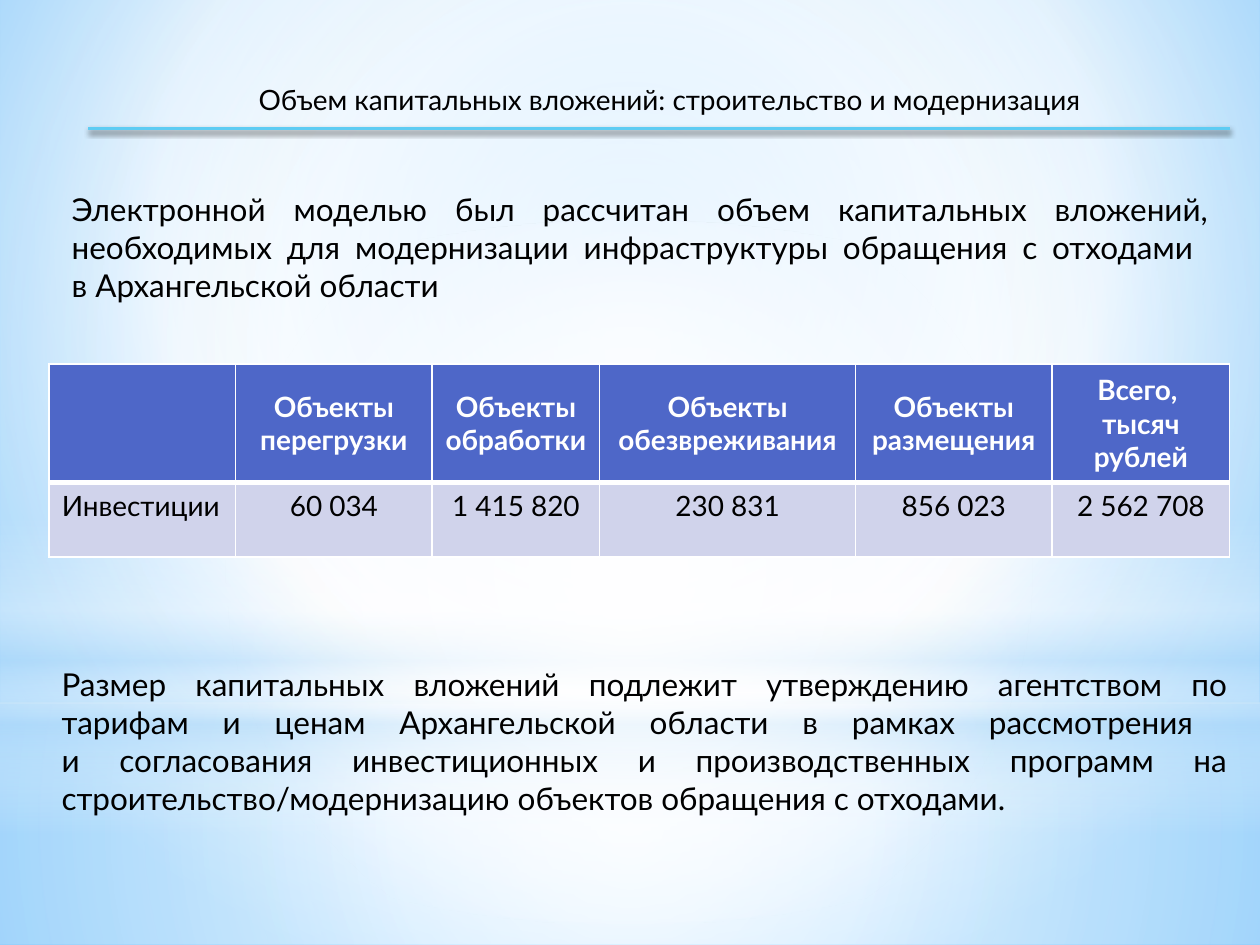
import pptx
import pptx.util
import pptx.dml.color
import pptx.enum.shapes
import pptx.enum.text
import pptx.oxml
import pptx.oxml.ns
import lxml.etree

Inches = pptx.util.Inches
Pt = pptx.util.Pt
RGB = pptx.dml.color.RGBColor
Kind = pptx.enum.shapes.MSO_SHAPE
Align = pptx.enum.text.PP_ALIGN
Anchor = pptx.enum.text.MSO_ANCHOR
qn = pptx.oxml.ns.qn

BLACK = RGB(0, 0, 0)
WHITE = RGB(255, 255, 255)
CYAN = RGB(0x5E, 0xCC, 0xF3)
BLUE = RGB(0x4E, 0x67, 0xC8)
LILAC = RGB(0xD0, 0xD3, 0xEB)
SKY = RGB(0xB4, 0xDC, 0xFA)
PALE = RGB(0x9E, 0xD5, 0xFF)
DEEP = RGB(0x5B, 0xB9, 0xFF)


def shade(root, stops, rect):
    marks = "".join(
        f'<a:gs pos="{pos * 1000}"><a:srgbClr val="{tone}">'
        f'<a:alpha val="{alpha * 1000}"/></a:srgbClr></a:gs>'
        for pos, tone, alpha in stops)
    if rect:
        sides = " ".join(f'{side}="{part * 1000}"' for side, part in zip("ltrb", rect))
        form = f'<a:path path="circle"><a:fillToRect {sides}/></a:path>'
    else:
        form = '<a:lin ang="5400000" scaled="0"/>'
    grad = pptx.oxml.parse_xml(
        f'<a:gradFill {pptx.oxml.ns.nsdecls("a")} rotWithShape="1">'
        f'<a:gsLst>{marks}</a:gsLst>{form}</a:gradFill>')
    old = next(root.iter(qn("a:solidFill")))
    old.getparent().replace(old, grad)


def write(par, text, align, look, tone):
    par.text = text
    par.alignment = align
    for run in par.runs:
        for key, val in look.items():
            setattr(run.font, key, val)
        run.font.color.rgb = tone


deck = pptx.Presentation()
deck.slide_width = Inches(10)
deck.slide_height = Inches(7.5)
slide = deck.slides.add_slide(deck.slide_layouts[5])
shapes = slide.shapes

slide.background.fill.solid()
shade(slide.element, [(0, PALE, 100), (60, WHITE, 100), (100, DEEP, 100)], (20, 10, 20, 60))

MID = (50, 50, 50, 50)
glows = [
    (Kind.RECTANGLE, 5.58, 1.92, MID,
     [(0, WHITE, 91), (37, WHITE, 76), (100, SKY, 79)]),
    (Kind.RECTANGLE, 0, 5.58, MID,
     [(0, WHITE, 89), (48, WHITE, 62), (100, SKY, 79)]),
    (Kind.RECTANGLE, 4.12, 2.5, None,
     [(0, WHITE, 0), (29, WHITE, 30), (45, SKY, 40),
      (55, WHITE, 26), (65, SKY, 60), (100, WHITE, 0)]),
    (Kind.OVAL, 1.75, 5.58, MID, [(0, WHITE, 100), (56, WHITE, 0)]),
]
for kind, top, height, rect, stops in glows:
    glow = shapes.add_shape(kind, 0, Inches(top), Inches(10), Inches(height))
    glow.shadow.inherit = False
    glow.line.fill.background()
    glow.fill.solid()
    shade(glow.element, stops, rect)

small = {"name": "Lato", "size": Pt(16), "bold": False}
strong = {**small, "bold": True}
large = {**small, "size": Pt(18)}

title = shapes.title
title.element.getparent().append(title.element)
place = {"left": 1.14, "top": 0.6, "width": 8.35, "height": 0.37}
for key, val in place.items():
    setattr(title, key, Inches(val))
title.text_frame.auto_size = pptx.enum.text.MSO_AUTO_SIZE.NONE
write(title.text_frame.paragraphs[0],
      "Объем капитальных вложений: строительство и модернизация",
      Align.CENTER, small, BLACK)

rule = shapes.add_connector(pptx.enum.shapes.MSO_CONNECTOR.STRAIGHT,
                            Inches(0.7), Inches(1.02), Inches(9.76), Inches(1.02))
rule.line.color.rgb = CYAN
rule.line.width = Pt(2)
props = rule.element.spPr
glow = lxml.etree.SubElement(props, qn("a:effectLst"))
cast = lxml.etree.SubElement(glow, qn("a:outerShdw"), blurRad=str(Pt(3.1)),
                             dist=str(Pt(1.8)), dir="5400000", rotWithShape="0")
tint = lxml.etree.SubElement(cast, qn("a:srgbClr"), val=str(BLACK))
lxml.etree.SubElement(tint, qn("a:alpha"), val="45000")

notes = [
    (0.47, 1.33, 9.22, 1.14, 0.18,
     "Электронной моделью был рассчитан объем капитальных вложений, "
     "необходимых для модернизации инфраструктуры обращения с отходами \v"
     "в Архангельской области "),
    (0.39, 5.23, 9.45, 1.31, 0.05,
     "Размер капитальных вложений подлежит утверждению агентством по "
     "тарифам и ценам Архангельской области в рамках рассмотрения \v"
     "и согласования инвестиционных и производственных программ на "
     "строительство/модернизацию объектов обращения с отходами."),
]
for left, top, width, height, inset, text in notes:
    box = shapes.add_textbox(Inches(left), Inches(top), Inches(width), Inches(height))
    box.text_frame.word_wrap = True
    box.text_frame.margin_top = Inches(inset)
    write(box.text_frame.paragraphs[0], text, Align.JUSTIFY, large, BLACK)

heads = ["", "Объекты перегрузки", "Объекты обработки", "Объекты обезвреживания",
         "Объекты размещения", "Всего, \vтысяч рублей"]
sums = ["Инвестиции", "60 034", "1\u00a0415 820", "230 831", "856 023", "2\u00a0562 708"]
bands = [
    (heads, 0.94, BLUE, WHITE, strong, Anchor.MIDDLE, {"L": 1, "R": 1, "T": 1, "B": 3}),
    (sums, 0.59, LILAC, BLACK, small, Anchor.TOP, {"L": 1, "R": 1, "T": 3, "B": 1}),
]
table = shapes.add_table(2, 6, Inches(0.39), Inches(2.89), Inches(9.38), Inches(1.52)).table
for col, width in zip(table.columns, [1.48, 1.56, 1.33, 2.03, 1.56, 1.41]):
    col.width = Inches(width)
for row, (texts, height, fill, tone, look, anchor, edges) in zip(table.rows, bands):
    row.height = Inches(height)
    for cell, text in zip(row.cells, texts):
        align = Align.LEFT if text == "Инвестиции" else Align.CENTER
        write(cell.text_frame.paragraphs[0], text, align, look, tone)
        cell.vertical_anchor = anchor
        props = cell.fill and cell.text_frame and next(cell.text_frame.paragraphs[0]._p.iterancestors(qn("a:tc"))).get_or_add_tcPr()
        for side, size in edges.items():
            edge = lxml.etree.SubElement(props, qn("a:ln" + side), w=str(Pt(size)))
            ink = lxml.etree.SubElement(edge, qn("a:solidFill"))
            lxml.etree.SubElement(ink, qn("a:srgbClr"), val=str(WHITE))
        cell.fill.solid()
        cell.fill.fore_color.rgb = fill

deck.save("out.pptx")
